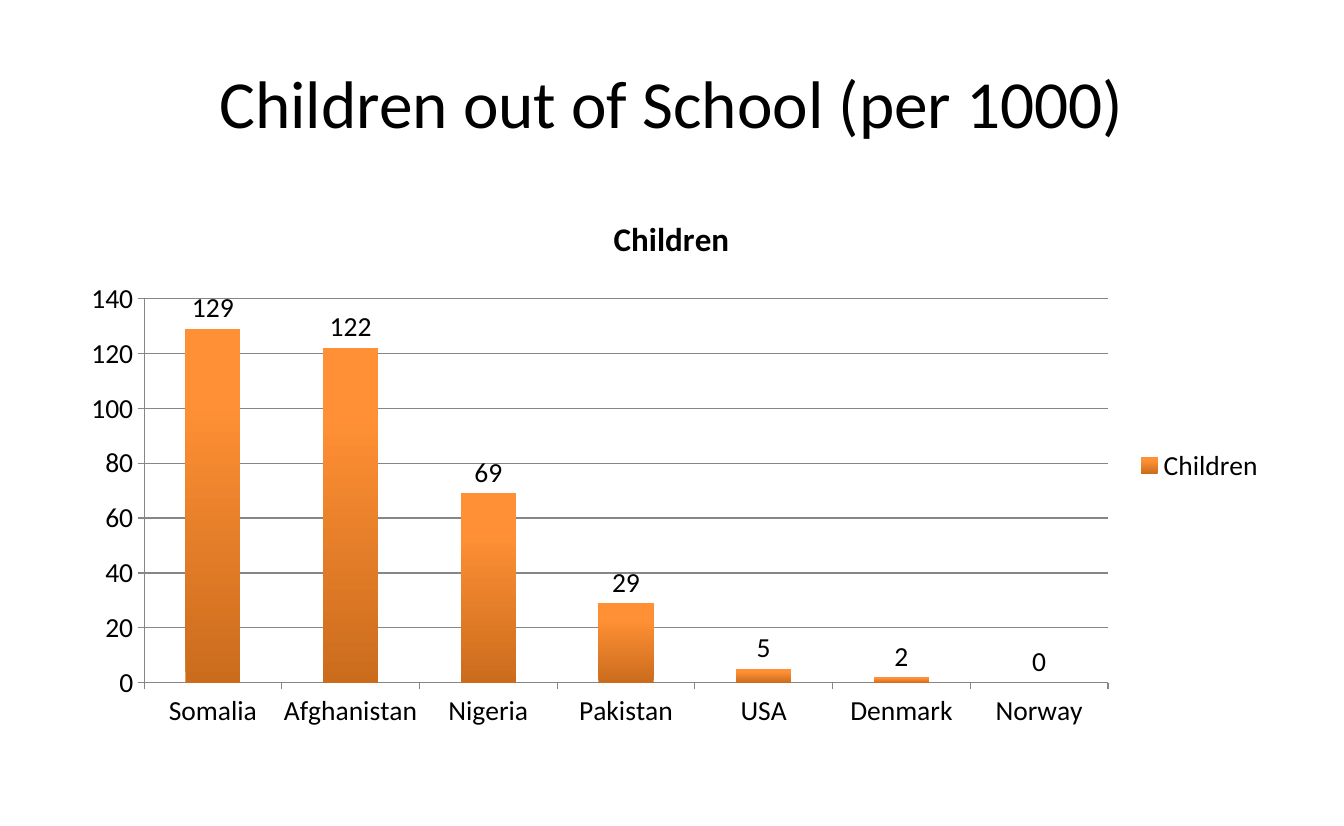
from typing import NamedTuple

import pptx
import pptx.chart.data
import pptx.dml.color
import pptx.enum.chart
import pptx.enum.text
import pptx.util

Cm = pptx.util.Cm
Pt = pptx.util.Pt

FONT = "Calibri"
COLOURS = {"text": "000000", "grid": "868686", "bar_foot": "CB6C1D", "bar_top": "FF9035"}


class Frame(NamedTuple):
    left: float
    top: float
    width: float
    height: float


class Country(NamedTuple):
    name: str
    children: int


TITLE_FRAME = Frame(1.55, 0.76, 27.91, 3.18)
CHART_FRAME = Frame(1.55, 4.45, 27.89, 12.57)
COUNTRIES = [
    Country("Somalia", 129),
    Country("Afghanistan", 122),
    Country("Nigeria", 69),
    Country("Pakistan", 29),
    Country("USA", 5),
    Country("Denmark", 2),
    Country("Norway", 0),
]


def colour(name: str) -> pptx.dml.color.RGBColor:
    return pptx.dml.color.RGBColor.from_string(COLOURS[name])


def style_font(font, size: float, bold: bool = False) -> None:
    font.name = FONT
    font.size = Pt(size)
    font.bold = bold
    font.color.rgb = colour("text")


def style_line(line) -> None:
    line.color.rgb = colour("grid")
    line.width = Pt(0.75)


def add_title(page, frame: Frame) -> None:
    box = page.shapes.title
    box.left, box.top, box.width, box.height = map(Cm, frame)
    box.text_frame.text = "Children out of School (per 1000)"
    box.text_frame.vertical_anchor = pptx.enum.text.MSO_ANCHOR.MIDDLE
    para = box.text_frame.paragraphs[0]
    para.alignment = pptx.enum.text.PP_ALIGN.CENTER
    style_font(para.runs[0].font, 44)


def style_bars(plot) -> None:
    plot.gap_width = 150
    plot.vary_by_categories = False
    fill = plot.series[0].format.fill
    fill.gradient()
    fill.gradient_angle = 90
    stops = zip(fill.gradient_stops, ("bar_foot", "bar_top"), (0, 0.8))
    for stop, name, position in stops:
        stop.color.rgb = colour(name)
        stop.position = position
    plot.has_data_labels = True
    labels = plot.data_labels
    labels.show_value = True
    labels.position = pptx.enum.chart.XL_LABEL_POSITION.OUTSIDE_END
    style_font(labels.font, 18)


def add_column_chart(page, frame: Frame, countries: list[Country]) -> None:
    data = pptx.chart.data.CategoryChartData()
    data.categories = [country.name for country in countries]
    data.add_series("Children", [country.children for country in countries])
    kind = pptx.enum.chart.XL_CHART_TYPE.COLUMN_CLUSTERED
    chart = page.shapes.add_chart(kind, *map(Cm, frame), data).chart
    style_font(chart.font, 18)

    chart.has_title = True
    chart.chart_title.text_frame.text = "Children"
    chart.chart_title.include_in_layout = False
    style_font(chart.chart_title.text_frame.paragraphs[0].runs[0].font, 21.6, bold=True)

    chart.has_legend = True
    chart.legend.position = pptx.enum.chart.XL_LEGEND_POSITION.RIGHT
    chart.legend.include_in_layout = False

    for axis in (chart.category_axis, chart.value_axis):
        axis.major_tick_mark = pptx.enum.chart.XL_TICK_MARK.OUTSIDE
        style_line(axis.format.line)
    chart.value_axis.has_major_gridlines = True
    style_line(chart.value_axis.major_gridlines.format.line)
    style_bars(chart.plots[0])


def main() -> None:
    deck = pptx.Presentation()
    deck.slide_width = Cm(31.01)
    deck.slide_height = Cm(19.05)
    page = deck.slides.add_slide(deck.slide_layouts.get_by_name("Title Only"))
    add_title(page, TITLE_FRAME)
    add_column_chart(page, CHART_FRAME, COUNTRIES)
    deck.save("out.pptx")


if __name__ == "__main__":
    main()
